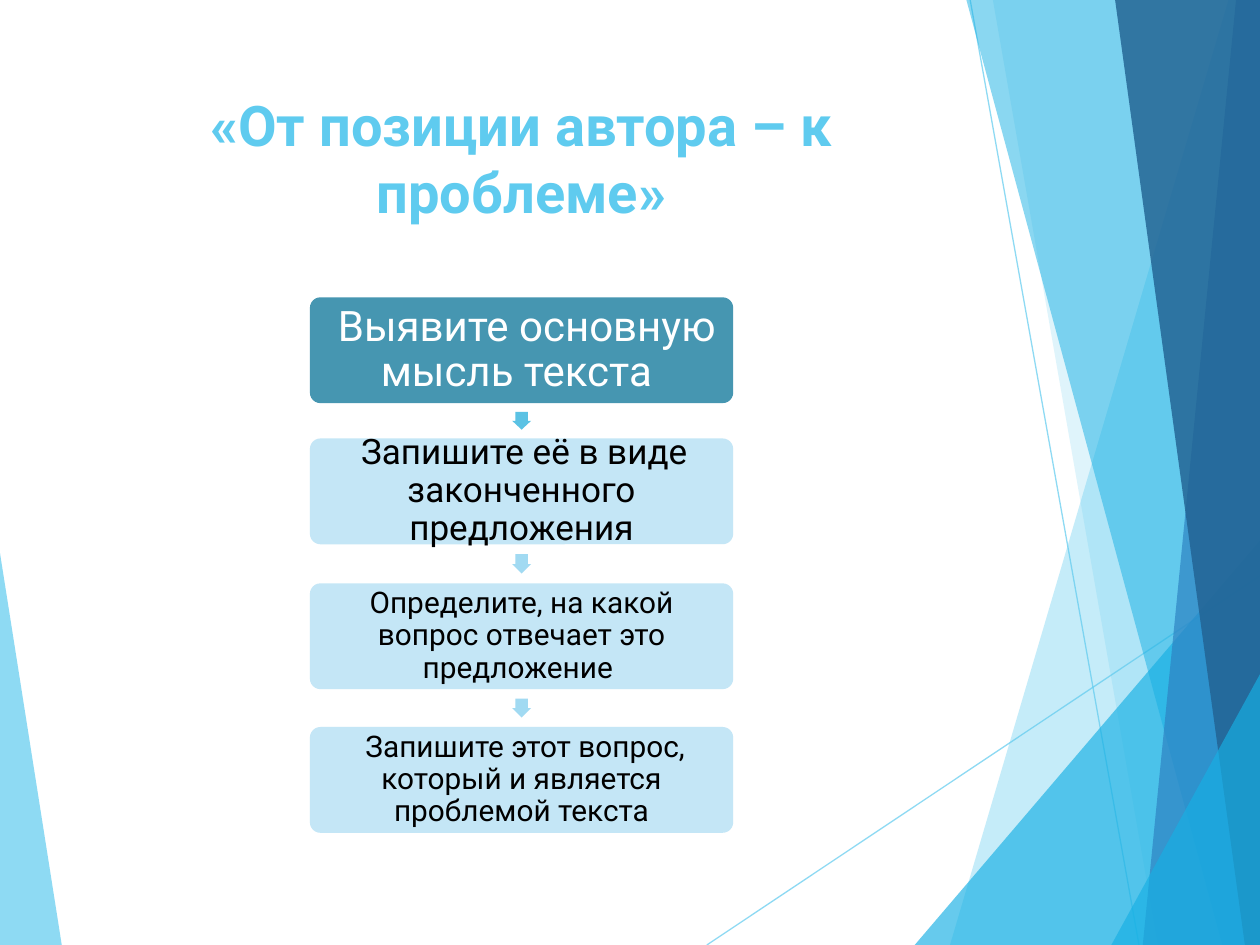
from lxml.etree import SubElement
from pptx import Presentation
from pptx.dml.color import RGBColor
from pptx.enum.shapes import MSO_CONNECTOR, MSO_SHAPE
from pptx.enum.text import MSO_ANCHOR, MSO_AUTO_SIZE, PP_ALIGN
from pptx.oxml.ns import qn
from pptx.util import Inches, Pt

SKY = RGBColor(0x5F, 0xCB, 0xEF)
CYAN = RGBColor(0x17, 0xB0, 0xE4)
BLUE = RGBColor(0x2E, 0x83, 0xC3)
NAVY = RGBColor(0x22, 0x62, 0x92)
TEAL = RGBColor(0x46, 0x96, 0xB1)
PALE = RGBColor(0xBE, 0xE4, 0xF6)
ARROW_STRONG = RGBColor(0x5B, 0xC2, 0xE4)
ARROW_LIGHT = RGBColor(0xA1, 0xDA, 0xF2)
WHITE = RGBColor(0xFF, 0xFF, 0xFF)
BLACK = RGBColor(0x00, 0x00, 0x00)
FONT = "Roboto"

WIDTH, HEIGHT = 10, 7.5
TITLE = "«От позиции автора – к проблеме»"
TITLE_AREA = (0.67, 0.67, 6.94, 1.44)

# Corner points, colour, opacity in percent
LEFT_FACET = ([(0, 4.39), (0.49, HEIGHT), (0, HEIGHT)], SKY, 70)
RIGHT_FACETS = [
    ([(9.75, 0), (7.54, HEIGHT), (WIDTH, HEIGHT), (WIDTH, 0)], SKY, 36),
    ([(7.88, 0), (9.19, HEIGHT), (WIDTH, HEIGHT), (WIDTH, 0)], SKY, 20),
    ([(7.26, HEIGHT), (WIDTH, 4.29), (WIDTH, HEIGHT)], CYAN, 66),
    ([(7.67, 0), (9.7, HEIGHT), (WIDTH, HEIGHT), (WIDTH, 0)], CYAN, 50),
    ([(9.81, 0), (9.07, HEIGHT), (WIDTH, HEIGHT), (WIDTH, 0)], BLUE, 70),
    ([(8.85, 0), (9.88, HEIGHT), (WIDTH, HEIGHT), (WIDTH, 0)], NAVY, 82),
    ([(8.82, HEIGHT), (WIDTH, 5.35), (WIDTH, HEIGHT)], CYAN, 66),
]
RAYS = [(5.61, HEIGHT, WIDTH, 4.57), (7.7, 0, 9.04, HEIGHT)]

# Top, runs of (text, size), fill, opacity, text colour, colour of the arrow below
STEPS = [
    (2.36, [(" Выявите основную мысль текста ", 24)], TEAL, 100, WHITE, ARROW_STRONG),
    (3.48, [(" ", 13), ("Запишите её в виде законченного предложения", 20)],
     PALE, 90, BLACK, ARROW_LIGHT),
    (4.63, [("Определите, на какой вопрос отвечает это предложение ", 17)],
     PALE, 90, BLACK, ARROW_LIGHT),
    (5.77, [(" Запишите этот вопрос, который и является проблемой текста", 17)],
     PALE, 90, BLACK, None),
]
STEP_LEFT, STEP_WIDTH, STEP_HEIGHT = 2.46, 3.36, 0.84
ARROW_WIDTH = 0.15


def set_opacity(color_format_owner, percent):
    """Add an alpha value to every RGB colour below an XML element."""
    for color in color_format_owner.iter(qn("a:srgbClr")):
        SubElement(color, qn("a:alpha"), val=str(percent * 1000))


def paint(shape, color, opacity=100):
    shape.shadow.inherit = False
    shape.fill.solid()
    shape.fill.fore_color.rgb = color
    shape.line.fill.background()
    if opacity < 100:
        set_opacity(shape.fill._xPr, opacity)


def add_facet(page, points, color, opacity):
    corners = [(Inches(x), Inches(y)) for x, y in points]
    builder = page.shapes.build_freeform(*corners[0])
    builder.add_line_segments(corners[1:], close=True)
    paint(builder.convert_to_shape(), color, opacity)


def add_ray(page, ends):
    ray = page.shapes.add_connector(MSO_CONNECTOR.STRAIGHT, *map(Inches, ends))
    ray.line.color.rgb = SKY
    ray.line.width = Pt(0.75)
    properties = ray._element.spPr
    set_opacity(properties, 70)
    SubElement(properties, qn("a:effectLst"))


def write(shape, runs, color, bold=False, spacing=None, **frame_format):
    frame = shape.text_frame
    settings = {"word_wrap": True, "auto_size": MSO_AUTO_SIZE.NONE, **frame_format}
    for name, value in settings.items():
        setattr(frame, name, value)
    para = frame.paragraphs[0]
    para.alignment = PP_ALIGN.CENTER
    para.line_spacing = spacing
    for text, size in runs:
        span = para.add_run()
        span.text = text
        for name, value in {"name": FONT, "size": Pt(size), "bold": bold}.items():
            setattr(span.font, name, value)
        span.font.color.rgb = color


def add_step(page, top, runs, fill, opacity, color):
    area = map(Inches, (STEP_LEFT, top, STEP_WIDTH, STEP_HEIGHT))
    box = page.shapes.add_shape(MSO_SHAPE.ROUNDED_RECTANGLE, *area)
    box.adjustments[0] = 0.1
    paint(box, fill, opacity)
    margins = {f"margin_{side}": Inches(0.05)
               for side in ("left", "top", "right", "bottom")}
    write(box, runs, color, spacing=0.9, vertical_anchor=MSO_ANCHOR.MIDDLE, **margins)


def add_arrow(page, top, next_top, color):
    """Centre an arrow in the gap between two steps, half as long as the gap."""
    gap = next_top - top - STEP_HEIGHT
    left = STEP_LEFT + (STEP_WIDTH - ARROW_WIDTH) / 2
    area = map(Inches, (left, top + STEP_HEIGHT + gap / 4, ARROW_WIDTH, gap / 2))
    arrow = page.shapes.add_shape(MSO_SHAPE.DOWN_ARROW, *area)
    arrow.adjustments[0] = 0.67
    arrow.adjustments[1] = 0.5
    paint(arrow, color)


def main():
    deck = Presentation()
    deck.slide_width, deck.slide_height = Inches(WIDTH), Inches(HEIGHT)
    page = deck.slides.add_slide(deck.slide_layouts[5])

    add_facet(page, *LEFT_FACET)
    for ends in RAYS:
        add_ray(page, ends)
    for facet in RIGHT_FACETS:
        add_facet(page, *facet)

    title = page.shapes.title
    title.left, title.top, title.width, title.height = map(Inches, TITLE_AREA)
    write(title, [(TITLE, 32)], SKY, bold=True, vertical_anchor=MSO_ANCHOR.TOP)

    next_tops = [step[0] for step in STEPS[1:]] + [None]
    for (top, *content, arrow_color), next_top in zip(STEPS, next_tops):
        add_step(page, top, *content)
        if next_top:
            add_arrow(page, top, next_top, arrow_color)

    deck.save("out.pptx")


if __name__ == "__main__":
    main()
